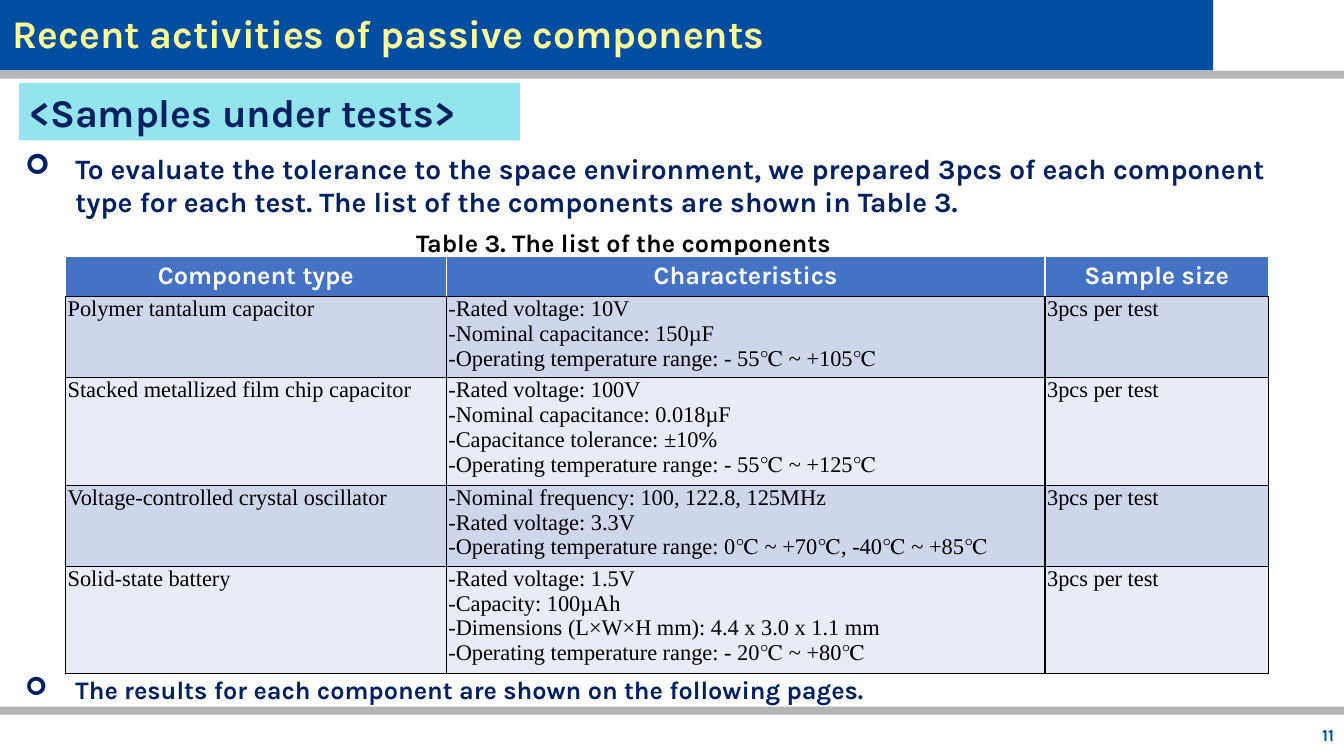
from dataclasses import dataclass
from lxml import etree
from pptx import Presentation
from pptx import util as u
from pptx.dml import color as c
from pptx.enum import shapes, text
from pptx.oxml import ns

Pt = u.Pt
Hue = c.RGBColor.from_string
Al = text.PP_ALIGN
Mid = text.MSO_ANCHOR.MIDDLE
Top = text.MSO_ANCHOR.TOP


@dataclass(frozen=True)
class Theme:
    head: str = "Karla"
    body: str = "Times New Roman"
    blue: str = "004EA2"
    gray: str = "B5B5B5"
    cyan: str = "93E4ED"
    navy: str = "002060"
    lemon: str = "FFFF99"
    white: str = "FFFFFF"
    black: str = "000000"
    top: str = "4472C4"
    bands: tuple = ("CFD5EA", "E9EBF5")
    title: int = 28
    lead: int = 20
    note: int = 18
    cell: int = 16
    page: int = 12


T = Theme()

HEADS = ["Component type", "Characteristics", "Sample size"]
PARTS = [
    ("Polymer tantalum capacitor", [
        "-Rated voltage: 10V",
        "-Nominal capacitance: 150µF",
        "-Operating temperature range: - 55℃ ~ +105℃"]),
    ("Stacked metallized film chip capacitor", [
        "-Rated voltage: 100V",
        "-Nominal capacitance: 0.018µF",
        "-Capacitance tolerance: ±10%",
        "-Operating temperature range: - 55℃ ~ +125℃"]),
    ("Voltage-controlled crystal oscillator", [
        "-Nominal frequency: 100, 122.8, 125MHz",
        "-Rated voltage: 3.3V",
        "-Operating temperature range: 0℃ ~ +70℃, -40℃ ~ +85℃"]),
    ("Solid-state battery", [
        "-Rated voltage: 1.5V",
        "-Capacity: 100µAh",
        "-Dimensions (L×W×H mm): 4.4 x 3.0 x 1.1 mm",
        "-Operating temperature range: - 20℃ ~ +80℃"]),
]
SIZE = "3pcs per test"


def write(frame, lines, size=T.note, hue=T.navy, font=T.head, bold=True,
          align=Al.LEFT, mark=None):
    for i, line in enumerate(lines):
        para = frame.paragraphs[0] if i == 0 else frame.add_paragraph()
        para.alignment = align
        if mark:
            props = para._p.get_or_add_pPr()
            props.set("marL", str(Pt(36)))
            props.set("indent", str(-Pt(36)))
            etree.SubElement(props, ns.qn("a:buFont")).set("typeface", "Wingdings")
            etree.SubElement(props, ns.qn("a:buChar")).set("char", mark)
        run = para.add_run()
        run.text = line
        run.font.size = Pt(size)
        run.font.name = font
        run.font.bold = bold
        run.font.color.rgb = Hue(hue)


def bar(slide, x, y, w, h, hue):
    rect = slide.shapes.add_shape(shapes.MSO_SHAPE.RECTANGLE,
                                  Pt(x), Pt(y), Pt(w), Pt(h))
    rect.shadow.inherit = False
    rect.fill.solid()
    rect.fill.fore_color.rgb = Hue(hue)
    rect.line.fill.background()
    return rect


def label(slide, x, y, w, h, line, anchor=Top, **form):
    frame = slide.shapes.add_textbox(Pt(x), Pt(y), Pt(w), Pt(h)).text_frame
    frame.word_wrap = True
    frame.vertical_anchor = anchor
    write(frame, [line], **form)


def edge(cell, hues):
    props = cell._tc.get_or_add_tcPr()
    for i, (side, hue) in enumerate(zip("LRTB", hues)):
        line = etree.Element(ns.qn(f"a:ln{side}"), w=str(Pt(1)))
        fill = etree.SubElement(line, ns.qn("a:solidFill"))
        etree.SubElement(fill, ns.qn("a:srgbClr"), val=hue)
        props.insert(i, line)


def paint(cell, hue, hues):
    cell.fill.solid()
    cell.fill.fore_color.rgb = Hue(hue)
    edge(cell, hues)


def grid(slide, x, y, wides, highs):
    table = slide.shapes.add_table(len(highs), len(wides), Pt(x), Pt(y),
                                   Pt(sum(wides)), Pt(sum(highs))).table
    for col, wide in zip(table.columns, wides):
        col.width = Pt(wide)
    for row, high in zip(table.rows, highs):
        row.height = Pt(high)
    for i, head in enumerate(HEADS):
        cell = table.cell(0, i)
        paint(cell, T.top, [T.white] * 3 + [T.black])
        write(cell.text_frame, [head], hue=T.white, align=Al.CENTER)
    for r, (name, facts) in enumerate(PARTS, 1):
        for i, lines in enumerate(([name], facts, [SIZE])):
            cell = table.cell(r, i)
            cell.margin_left = cell.margin_right = Pt(1.5)
            cell.margin_top = cell.margin_bottom = Pt(0)
            paint(cell, T.bands[(r - 1) % 2], [T.black] * 4)
            write(cell.text_frame, lines, size=T.cell, hue=T.black,
                  font=T.body, bold=False,
                  align=Al.LEFT if i else Al.JUSTIFY)


def main():
    deck = Presentation()
    deck.slide_width, deck.slide_height = Pt(960), Pt(540)
    slide = deck.slides.add_slide(deck.slide_layouts[6])

    bar(slide, 0, 0, 866.5, 50.4, T.blue)
    for y in (50.4, 504.7):
        bar(slide, 0, y, 960, 5.8, T.gray)
    label(slide, 918, 510.5, 42, 28.8, "11", anchor=Mid, size=T.page,
          hue=T.blue, align=Al.RIGHT)
    label(slide, 2, 9.4, 861, 28, "Recent activities of passive components",
          anchor=Mid, size=T.title, hue=T.lemon)

    frame = bar(slide, 13.7, 59.2, 357.8, 41.2, T.cyan).text_frame
    frame.vertical_anchor = Top
    write(frame, ["<Samples under tests>"], size=T.title)

    label(slide, 10.8, 104.4, 932.4, 55.7,
          "To evaluate the tolerance to the space environment, we prepared "
          "3pcs of each component type for each test. The list of the "
          "components are shown in Table 3.", size=T.lead, mark="➢")
    label(slide, 283.7, 159.1, 323.3, 29, "Table 3. The list of the components",
          hue=T.black, align=Al.CENTER)
    label(slide, 10.8, 478, 932.4, 29,
          "The results for each component are shown on the following pages.",
          mark="➢")
    grid(slide, 46.8, 182.9, [272, 427.7, 159.5], [29, 57.9, 76.6, 57.9, 76.6])
    deck.save("out.pptx")


if __name__ == "__main__":
    main()
